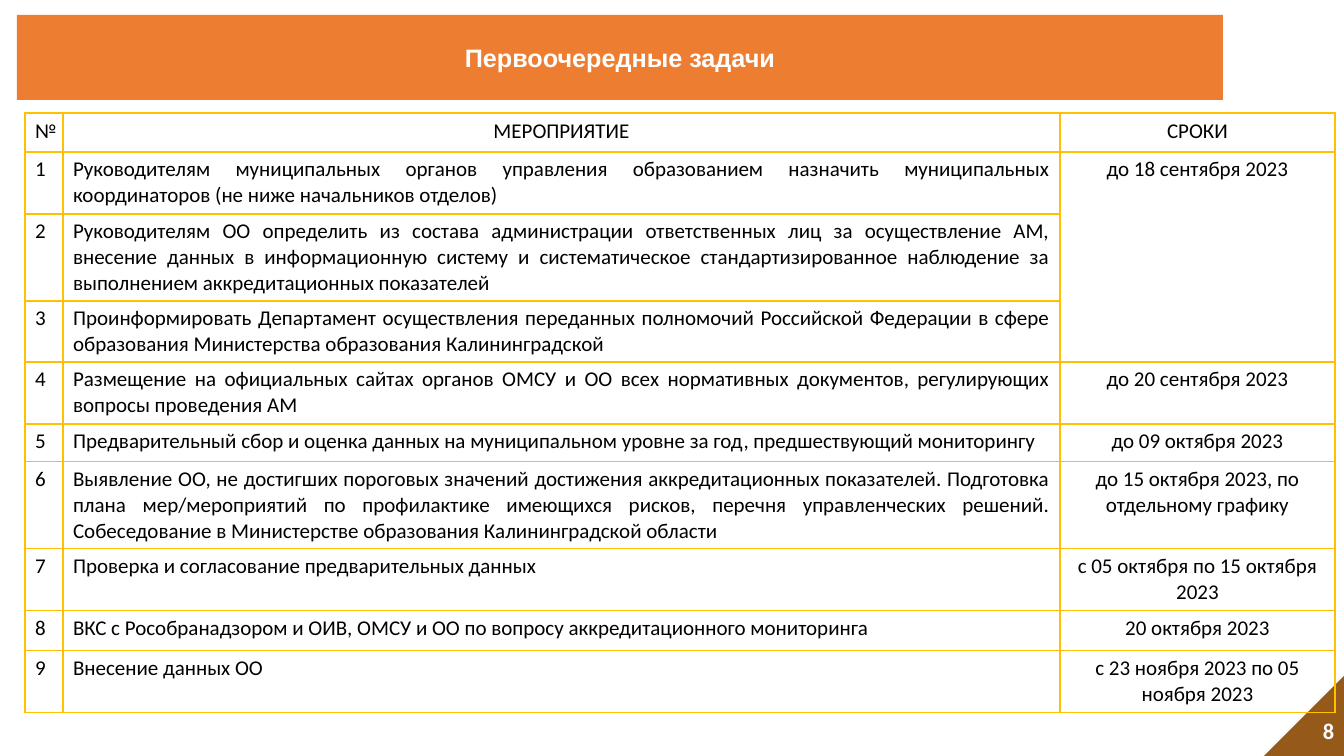
from lxml.etree import SubElement
from pptx import Presentation
from pptx.dml.color import RGBColor
from pptx.enum.shapes import MSO_SHAPE
from pptx.enum.text import MSO_ANCHOR, PP_ALIGN
from pptx.oxml.ns import qn
from pptx.util import Pt

SLIDE_WIDTH, SLIDE_HEIGHT = 1344, 756
SCALE = 12192000 / SLIDE_WIDTH
GOLD, ORANGE, BROWN, WHITE, BLACK = "FFC000", "ED7D31", "955A1A", "FFFFFF", "000000"

COLUMN_WIDTHS = [38, 997, 275]
ROW_HEIGHTS = [39, 62, 87, 61, 62, 38, 87, 62, 40, 62]
HEADINGS = ["№", "МЕРОПРИЯТИЕ", "СРОКИ"]
TASKS = [
    ("Руководителям муниципальных органов управления образованием назначить муниципальных "
     "координаторов (не ниже начальников отделов)", "до 18 сентября 2023"),
    ("Руководителям ОО определить из состава администрации ответственных лиц за осуществление АМ, "
     "внесение данных в информационную систему и систематическое стандартизированное наблюдение "
     "за выполнением аккредитационных показателей", None),
    ("Проинформировать Департамент осуществления переданных полномочий Российской Федерации "
     "в сфере образования Министерства образования Калининградской", None),
    ("Размещение на официальных сайтах органов ОМСУ и ОО всех нормативных документов, "
     "регулирующих вопросы проведения АМ", "до 20 сентября 2023"),
    ("Предварительный сбор и оценка данных на муниципальном уровне за год, "
     "предшествующий мониторингу", "до 09 октября 2023"),
    ("Выявление ОО, не достигших пороговых значений достижения аккредитационных показателей. "
     "Подготовка плана мер/мероприятий по профилактике имеющихся рисков, перечня управленческих "
     "решений. Собеседование в Министерстве образования Калининградской области",
     "до 15 октября 2023, по отдельному графику"),
    ("Проверка и согласование предварительных данных", "с 05 октября по 15 октября 2023"),
    ("ВКС с Рособранадзором и ОИВ, ОМСУ и ОО по вопросу аккредитационного мониторинга",
     "20 октября 2023"),
    ("Внесение данных ОО", "с 23 ноября 2023 по 05 ноября 2023"),
]


def px(length):
    """Turn a length in px into EMU."""
    return round(length * SCALE)


def color(value):
    """Turn a hex string into a colour."""
    return RGBColor.from_string(value)


def write_text(frame, text, *, size=15, font="Calibri", fill=BLACK, bold=False,
               align=PP_ALIGN.LEFT):
    """Put one formatted paragraph into a text frame."""
    frame.word_wrap = True
    paragraph = frame.paragraphs[0]
    paragraph.alignment = align
    run = paragraph.add_run()
    run.text = text
    run.font.size, run.font.name, run.font.bold = Pt(size), font, bold
    run.font.color.rgb = color(fill)


def add_filled_shape(slide, kind, box, fill):
    """Add a preset shape with a plain fill and no outline."""
    shape = slide.shapes.add_shape(kind, *map(px, box))
    shape.shadow.inherit = False
    shape.fill.solid()
    shape.fill.fore_color.rgb = color(fill)
    shape.line.fill.background()
    return shape


def add_borders(cell):
    """Draw gold lines on the four sides of a cell that has no fill."""
    properties = cell._tc.get_or_add_tcPr()
    for side in ("a:lnL", "a:lnR", "a:lnT", "a:lnB"):
        line = SubElement(properties, qn(side), w=str(Pt(1)))
        solid = SubElement(line, qn("a:solidFill"))
        SubElement(solid, qn("a:srgbClr"), val=GOLD)
    cell.fill.background()


def add_page_corner(slide, left, top, width, height):
    """Add the corner triangle with the page number."""
    triangle = add_filled_shape(slide, MSO_SHAPE.RIGHT_TRIANGLE, (left, top, width, height), BROWN)
    triangle.rotation = 270
    number_box = slide.shapes.add_textbox(
        px(left), px(top + height - 45), px(width), px(40))
    number_box.text_frame.vertical_anchor = MSO_ANCHOR.MIDDLE
    write_text(number_box.text_frame, "8", size=16, fill=WHITE, bold=True, align=PP_ALIGN.RIGHT)


def add_task_table(slide, left, top):
    """Add the table of tasks and deadlines."""
    table = slide.shapes.add_table(
        len(ROW_HEIGHTS), len(COLUMN_WIDTHS), px(left), px(top),
        px(sum(COLUMN_WIDTHS)), px(sum(ROW_HEIGHTS))).table
    table.first_row = table.horz_banding = False
    for column, width in zip(table.columns, COLUMN_WIDTHS):
        column.width = px(width)
    for row, height in zip(table.rows, ROW_HEIGHTS):
        row.height = px(height)
    rows = [HEADINGS] + [(str(number), *task) for number, task in enumerate(TASKS, 1)]
    body_alignments = [PP_ALIGN.LEFT, PP_ALIGN.JUSTIFY, PP_ALIGN.CENTER]
    for row_index, texts in enumerate(rows):
        alignments = body_alignments if row_index else [PP_ALIGN.CENTER] * 3
        for column_index, (text, align) in enumerate(zip(texts, alignments)):
            cell = table.cell(row_index, column_index)
            add_borders(cell)
            if text:
                write_text(cell.text_frame, text, align=align)
    table.cell(1, 2).merge(table.cell(3, 2))


def add_title_bar(slide, left, top, width, height):
    """Add the orange bar with the slide title."""
    bar = add_filled_shape(slide, MSO_SHAPE.RECTANGLE, (left, top, width, height), ORANGE)
    frame = bar.text_frame
    frame.margin_left = frame.margin_right = 0
    frame.margin_top = frame.margin_bottom = px(8)
    frame.vertical_anchor = MSO_ANCHOR.MIDDLE
    write_text(frame, "Первоочередные задачи", size=18, font="Arial", fill=WHITE, bold=True,
               align=PP_ALIGN.CENTER)


def main():
    """Build the slide and save it."""
    presentation = Presentation()
    presentation.slide_width = px(SLIDE_WIDTH)
    presentation.slide_height = px(SLIDE_HEIGHT)
    slide = presentation.slides.add_slide(presentation.slide_layouts[6])
    add_page_corner(slide, SLIDE_WIDTH - 80, SLIDE_HEIGHT - 80, 80, 80)
    add_task_table(slide, 25, 113)
    add_title_bar(slide, 17, 15, 1206, 85)
    presentation.save("out.pptx")


if __name__ == "__main__":
    main()
